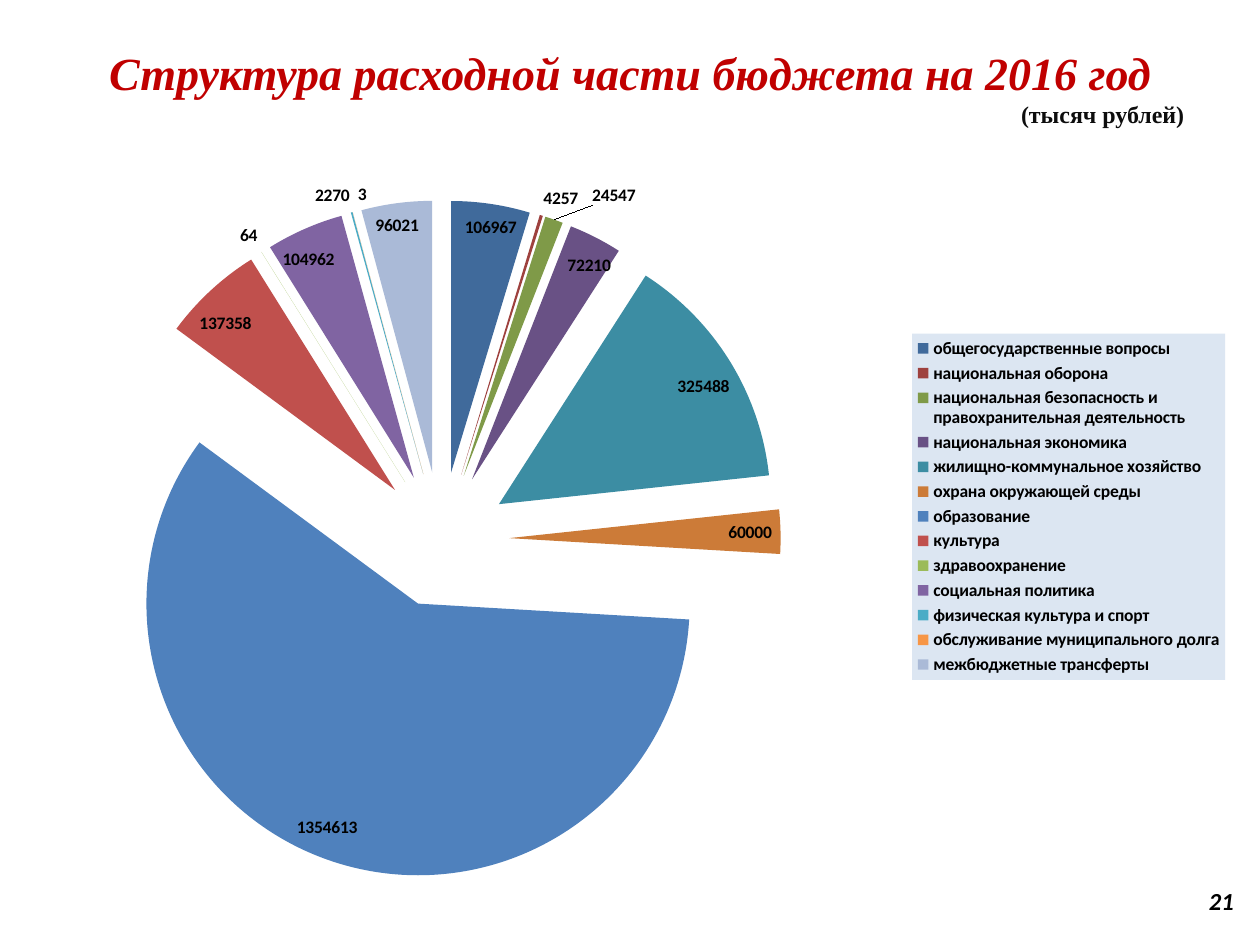
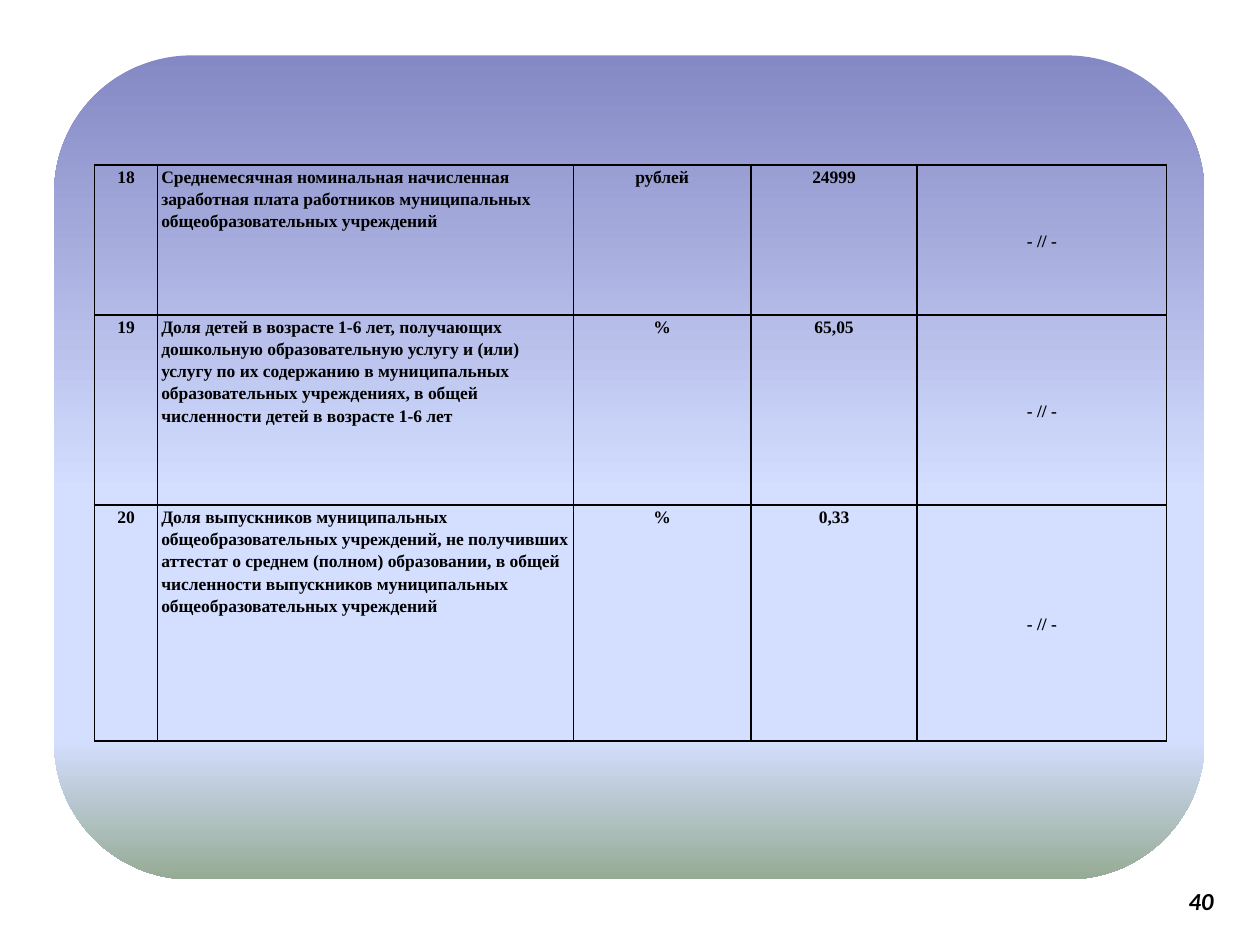
from lxml import etree
from pptx import Presentation
from pptx.chart.data import CategoryChartData
from pptx.dml.color import RGBColor
from pptx.enum.chart import XL_CHART_TYPE, XL_LABEL_POSITION, XL_LEGEND_POSITION
from pptx.enum.shapes import MSO_SHAPE
from pptx.enum.text import MSO_ANCHOR, MSO_AUTO_SIZE, PP_ALIGN
from pptx.oxml import parse_xml
from pptx.oxml.ns import nsdecls, qn
from pptx.util import Inches, Pt

COLORS = {
    "text": "000000",
    "title": "C00000",
    "unit": "0D0D0D",
    "legend": "DCE6F2",
    "border": "000000",
}
SERIF, SANS = "Times New Roman", "Calibri"
FORMATS = {
    "title": {"name": SERIF, "size": Pt(26.3), "bold": True, "italic": True},
    "unit": {"name": SERIF, "size": Pt(13.7), "bold": True, "italic": False},
    "number": {"name": SANS, "size": Pt(14), "bold": True, "italic": True},
    "chart": {"name": SANS, "size": Pt(10), "bold": True},
    "cell": {"name": SERIF, "size": Pt(10), "bold": True},
}


def format_font(font, style, color="text"):
    for attribute, value in FORMATS[style].items():
        setattr(font, attribute, value)
    font.color.rgb = RGBColor.from_string(COLORS[color])


def add_layout(parent, index, **values):
    """Insert a manual chart layout into parent, replacing any existing one."""
    for old in parent.findall(qn("c:layout")):
        parent.remove(old)
    layout = etree.Element(qn("c:layout"))
    manual = etree.SubElement(layout, qn("c:manualLayout"))
    for tag, value in values.items():
        etree.SubElement(manual, qn(f"c:{tag}")).set("val", str(value))
    parent.insert(index, layout)


presentation = Presentation()
presentation.slide_width = Inches(10)
presentation.slide_height = Inches(7.5)
chart_slide = presentation.slides.add_slide(presentation.slide_layouts[5])
table_slide = presentation.slides.add_slide(presentation.slide_layouts[6])

# Page numbers
for slide, number, width in ((chart_slide, "21", 2.72), (table_slide, "40", 2.56)):
    box = slide.shapes.add_textbox(Inches(7.17), Inches(6.95), Inches(width), Inches(0.4))
    box.text_frame.word_wrap = True
    box.text_frame.vertical_anchor = MSO_ANCHOR.MIDDLE
    paragraph = box.text_frame.paragraphs[0]
    paragraph.text = number
    paragraph.alignment = PP_ALIGN.RIGHT
    format_font(paragraph.runs[0].font, "number")

# Title with the unit of measure
title = chart_slide.shapes.title
title.left, title.top = Inches(0.5), Inches(0.3)
title.width, title.height = Inches(9), Inches(0.77)
title.text_frame.text = "Структура расходной части бюджета на 2016 год\n(тысяч рублей)"
title.text_frame.auto_size = MSO_AUTO_SIZE.NONE
title_lines = (("title", PP_ALIGN.CENTER), ("unit", PP_ALIGN.RIGHT))
for paragraph, (style, alignment) in zip(title.text_frame.paragraphs, title_lines):
    paragraph.alignment = alignment
    paragraph.space_before = Pt(0)
    format_font(paragraph.runs[0].font, style, style)

# Expenditure pie: section, amount, slice colour
expenses = [
    ("общегосударственные вопросы", 106967, "406A9B"),
    ("национальная оборона", 4257, "9E413E"),
    ("национальная безопасность и правохранительная деятельность", 24547, "7F9A48"),
    ("национальная экономика", 72210, "695185"),
    ("жилищно-коммунальное хозяйство", 325488, "3C8DA3"),
    ("охрана окружающей среды", 60000, "CC7B38"),
    ("образование", 1354613, "4F81BD"),
    ("культура", 137358, "C0504D"),
    ("здравоохранение", 64, "9BBB59"),
    ("социальная политика", 104962, "8064A2"),
    ("физическая культура и спорт", 2270, "4BACC6"),
    ("обслуживание муниципального долга", 3, "F79646"),
    ("межбюджетные трансферты", 96021, "AABAD7"),
]
chart_data = CategoryChartData()
chart_data.categories = [section for section, amount, color in expenses]
chart_data.add_series("Series 1", [amount for section, amount, color in expenses])
chart = chart_slide.shapes.add_chart(
    XL_CHART_TYPE.PIE, Inches(0.35), Inches(1.07), Inches(9.45), Inches(5.91), chart_data
).chart
chart.has_title = False
format_font(chart.font, "chart")
plot = chart.plots[0]
plot.vary_by_categories = True
add_layout(chart._chartSpace.chart.plotArea, 0, layoutTarget="inner", xMode="edge",
           yMode="edge", x=0, y=0.088, w=0.667, h=0.912)

# Slices pulled apart
series = plot.series[0]
explosion = etree.Element(qn("c:explosion"))
explosion.set("val", "25")
series._element.find(qn("c:tx")).addnext(explosion)
for index, (section, amount, color) in enumerate(expenses):
    fill = series.points[index].format.fill
    fill.solid()
    fill.fore_color.rgb = RGBColor.from_string(color)

# Value labels, with the crowded one moved aside
labels = series.data_labels
labels.show_value = True
labels.position = XL_LABEL_POSITION.BEST_FIT
format_font(labels.font, "chart")
security_label = series.points[2].data_label
security_label.position = XL_LABEL_POSITION.BEST_FIT
format_font(security_label.font, "chart")
add_layout(labels._element.find(qn("c:dLbl")), 1, x=0.03, y=-0.01)

# Legend on a pale panel
chart.has_legend = True
legend = chart.legend
legend.position = XL_LEGEND_POSITION.RIGHT
legend.include_in_layout = False
format_font(legend.font, "chart")
add_layout(legend._element, 1, xMode="edge", yMode="edge", x=0.729, y=0.267, w=0.263, h=0.465)
legend_fill = parse_xml(
    f'<c:spPr {nsdecls("c", "a")}><a:solidFill><a:srgbClr val="{COLORS["legend"]}"/>'
    "</a:solidFill></c:spPr>"
)
legend._element.find(qn("c:txPr")).addprevious(legend_fill)

# Gradient panel behind the table
panel = table_slide.shapes.add_shape(
    MSO_SHAPE.ROUNDED_RECTANGLE, Inches(0.43), Inches(0.44), Inches(9.13), Inches(6.54)
)
panel.shadow.inherit = False
panel.line.fill.background()
panel.fill.gradient()
panel.fill.gradient_angle = 270
stops = panel._element.spPr.find(qn("a:gradFill")).find(qn("a:gsLst"))
for stop in list(stops):
    stops.remove(stop)
for position, color in ((0, "8488C4"), (53, "D4DEFF"), (83, "D4DEFF"), (100, "96AB94")):
    stop = etree.SubElement(stops, qn("a:gs"))
    stop.set("pos", str(position * 1000))
    etree.SubElement(stop, qn("a:srgbClr")).set("val", color)

# Indicator table: number, indicator, unit, value, note
same_note = "- // -"
indicators = [
    ("18", "Среднемесячная номинальная начисленная заработная плата работников "
     "муниципальных общеобразовательных учреждений", "рублей", "24999", same_note),
    ("19", "Доля детей в возрасте 1-6 лет, получающих дошкольную образовательную услугу "
     "и (или) услугу по их содержанию в муниципальных образовательных учреждениях, "
     "в общей численности детей в возрасте 1-6 лет", "%", "65,05", same_note),
    ("20", "Доля выпускников муниципальных общеобразовательных учреждений, не получивших "
     "аттестат о среднем (полном) образовании, в общей численности выпускников "
     "муниципальных общеобразовательных учреждений", "%", "0,33", same_note),
]
column_widths = (0.5, 3.3, 1.41, 1.32, 1.98)
row_heights = (1.19, 1.51, 1.87)
table = table_slide.shapes.add_table(
    len(row_heights), len(column_widths), Inches(0.75), Inches(1.31), Inches(8.5), Inches(4.57)
).table
table.first_row = table.horz_banding = False
for column, width in zip(table.columns, column_widths):
    column.width = Inches(width)
for row, height, values in zip(table.rows, row_heights, indicators):
    row.height = Inches(height)
    for index, (cell, value) in enumerate(zip(row.cells, values)):
        cell.text = value
        cell.margin_left = cell.margin_right = Inches(0.03)
        cell.margin_top = cell.margin_bottom = 0
        cell.vertical_anchor = MSO_ANCHOR.MIDDLE if index == 4 else MSO_ANCHOR.TOP
        paragraph = cell.text_frame.paragraphs[0]
        paragraph.alignment = PP_ALIGN.LEFT if index == 1 else PP_ALIGN.CENTER
        paragraph.line_spacing = 1.15
        format_font(paragraph.runs[0].font, "cell")
        cell.fill.background()
        properties = cell._tc.get_or_add_tcPr()
        for position, side in enumerate(("lnL", "lnR", "lnT", "lnB")):
            properties.insert(position, parse_xml(
                f'<a:{side} {nsdecls("a")} w="12700"><a:solidFill>'
                f'<a:srgbClr val="{COLORS["border"]}"/></a:solidFill></a:{side}>'
            ))

presentation.save("out.pptx")
